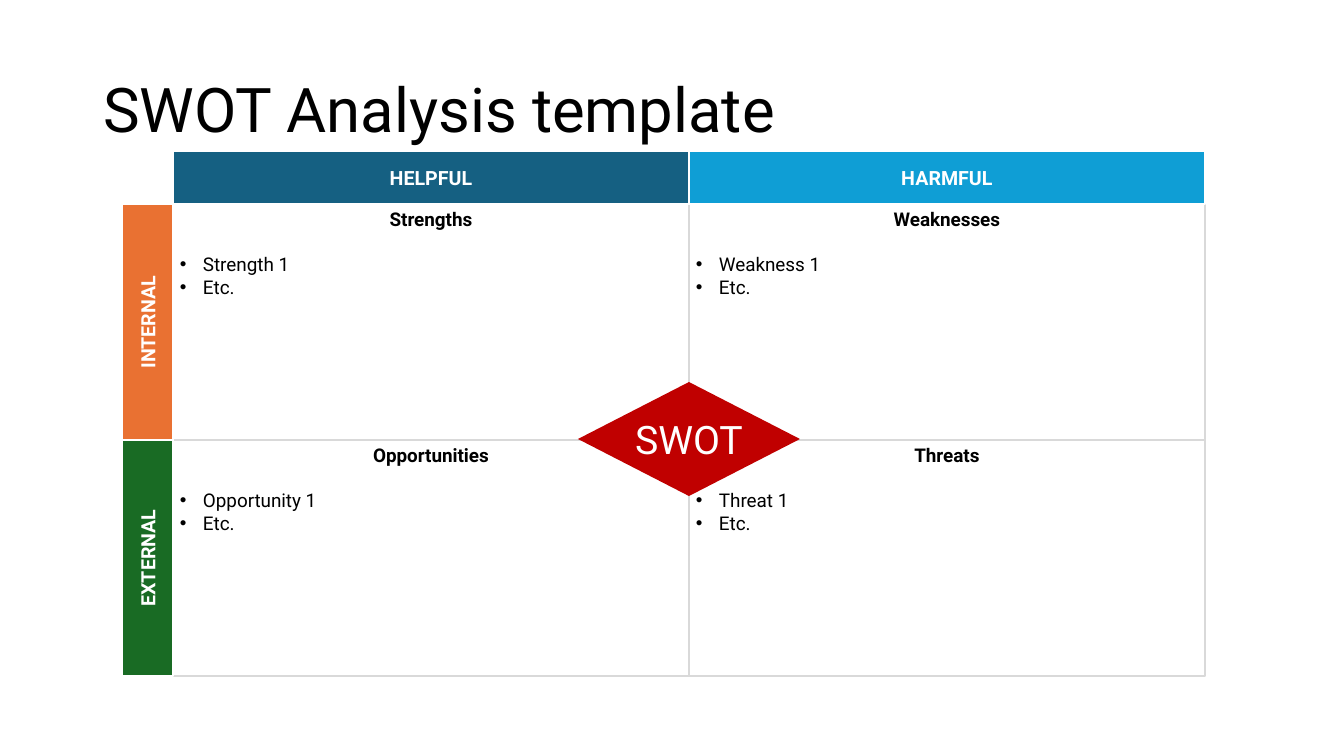
from pptx import Presentation
from pptx.dml.color import RGBColor
from pptx.enum.shapes import MSO_SHAPE
from pptx.enum.text import MSO_ANCHOR, MSO_AUTO_SIZE, PP_ALIGN
from pptx.oxml.ns import qn
from pptx.util import Pt
from lxml.etree import SubElement

SCALE = 914400 / 100.8  # EMU in one px
FONT = "Roboto"

BLACK = RGBColor(0x00, 0x00, 0x00)
WHITE = RGBColor(0xFF, 0xFF, 0xFF)
GREY = RGBColor(0xD9, 0xD9, 0xD9)
NAVY = RGBColor(0x15, 0x60, 0x82)
BLUE = RGBColor(0x0F, 0x9E, 0xD5)
ORANGE = RGBColor(0xE9, 0x71, 0x32)
GREEN = RGBColor(0x19, 0x6B, 0x24)
RED = RGBColor(0xC0, 0x00, 0x00)

# Grid of the matrix, in px
LEFT, TOP = 173, 204
CELL_W, CELL_H = 516, 236
HEAD_H, SIDE_W = 53, 51

COLUMNS = [("HELPFUL", NAVY), ("HARMFUL", BLUE)]
ROWS = [("INTERNAL", ORANGE), ("EXTERNAL", GREEN)]
CELLS = [
    [("Strengths", "Strength 1"), ("Weaknesses", "Weakness 1")],
    [("Opportunities", "Opportunity 1"), ("Threats", "Threat 1")],
]


def px(count):
    return round(count * SCALE)


def style(para, size, color, bold=False, align=PP_ALIGN.CENTER):
    para.alignment = align
    for run in para.runs:
        font = run.font
        font.name, font.size, font.bold = FONT, Pt(size), bold
        font.color.rgb = color


def add_bullet(para):
    props = para._p.get_or_add_pPr()
    props.set("marL", str(px(23)))
    props.set("indent", str(px(-23)))
    SubElement(props, qn("a:buFont")).set("typeface", "Arial")
    SubElement(props, qn("a:buChar")).set("char", "•")


def add_box(slide, kind, box, fill=None, line=None, pad=(7, 4)):
    shape = slide.shapes.add_shape(kind, *map(px, box))
    shape.shadow.inherit = False
    if fill is None:
        shape.fill.background()
    else:
        shape.fill.solid()
        shape.fill.fore_color.rgb = fill
    if line is None:
        shape.line.fill.background()
    else:
        shape.line.color.rgb = line
        shape.line.width = Pt(1.5)
    frame = shape.text_frame
    frame.word_wrap = True
    frame.margin_left = frame.margin_right = px(pad[0])
    frame.margin_top = frame.margin_bottom = px(pad[1])
    frame.vertical_anchor = MSO_ANCHOR.MIDDLE
    return shape


def add_label(slide, text, box, fill, turned=False):
    shape = add_box(slide, MSO_SHAPE.RECTANGLE, box, fill, WHITE)
    shape.text_frame.text = text
    style(shape.text_frame.paragraphs[0], 14, WHITE, bold=True)
    if turned:
        shape.element.txBody.bodyPr.set("vert", "vert270")


def add_cell(slide, name, item, box):
    frame = add_box(slide, MSO_SHAPE.RECTANGLE, box, line=GREY).text_frame
    frame.vertical_anchor = MSO_ANCHOR.TOP
    frame.text = name
    head = frame.paragraphs[0]
    style(head, 13.5, BLACK, bold=True)
    head.space_after = Pt(16)
    for text in (item, "Etc."):
        para = frame.add_paragraph()
        para.text = text
        style(para, 13.5, BLACK, align=PP_ALIGN.LEFT)
        add_bullet(para)


def add_diamond(slide, text, box):
    shape = add_box(slide, MSO_SHAPE.DIAMOND, box, RED, pad=(0, 0))
    shape.text_frame.text = text
    style(shape.text_frame.paragraphs[0], 28, WHITE)


def set_title(slide, text, box):
    title = slide.shapes.title
    title.left, title.top, title.width, title.height = map(px, box)
    frame = title.text_frame
    frame.text = text
    frame.word_wrap = True
    frame.auto_size = MSO_AUTO_SIZE.NONE
    frame.vertical_anchor = MSO_ANCHOR.MIDDLE
    para = frame.paragraphs[0]
    para.line_spacing = 0.9
    style(para, 44, BLACK, align=PP_ALIGN.LEFT)


def main():
    deck = Presentation()
    deck.slide_width, deck.slide_height = px(1344), px(756)
    slide = deck.slides.add_slide(deck.slide_layouts[5])
    set_title(slide, "SWOT Analysis template", (93, 40, 1159, 146))

    # Four quadrants
    for row, cells in enumerate(CELLS):
        for col, (name, item) in enumerate(cells):
            box = (LEFT + col * CELL_W, TOP + row * CELL_H, CELL_W, CELL_H)
            add_cell(slide, name, item, box)

    # Column and row labels
    for col, (text, fill) in enumerate(COLUMNS):
        box = (LEFT + col * CELL_W, TOP - HEAD_H, CELL_W, HEAD_H)
        add_label(slide, text, box, fill)
    for row, (text, fill) in enumerate(ROWS):
        box = (LEFT - SIDE_W, TOP + row * CELL_H, SIDE_W, CELL_H)
        add_label(slide, text, box, fill, turned=True)

    # Centre mark
    add_diamond(slide, "SWOT", (578, 382, 222, 114))

    deck.save("out.pptx")


if __name__ == "__main__":
    main()
